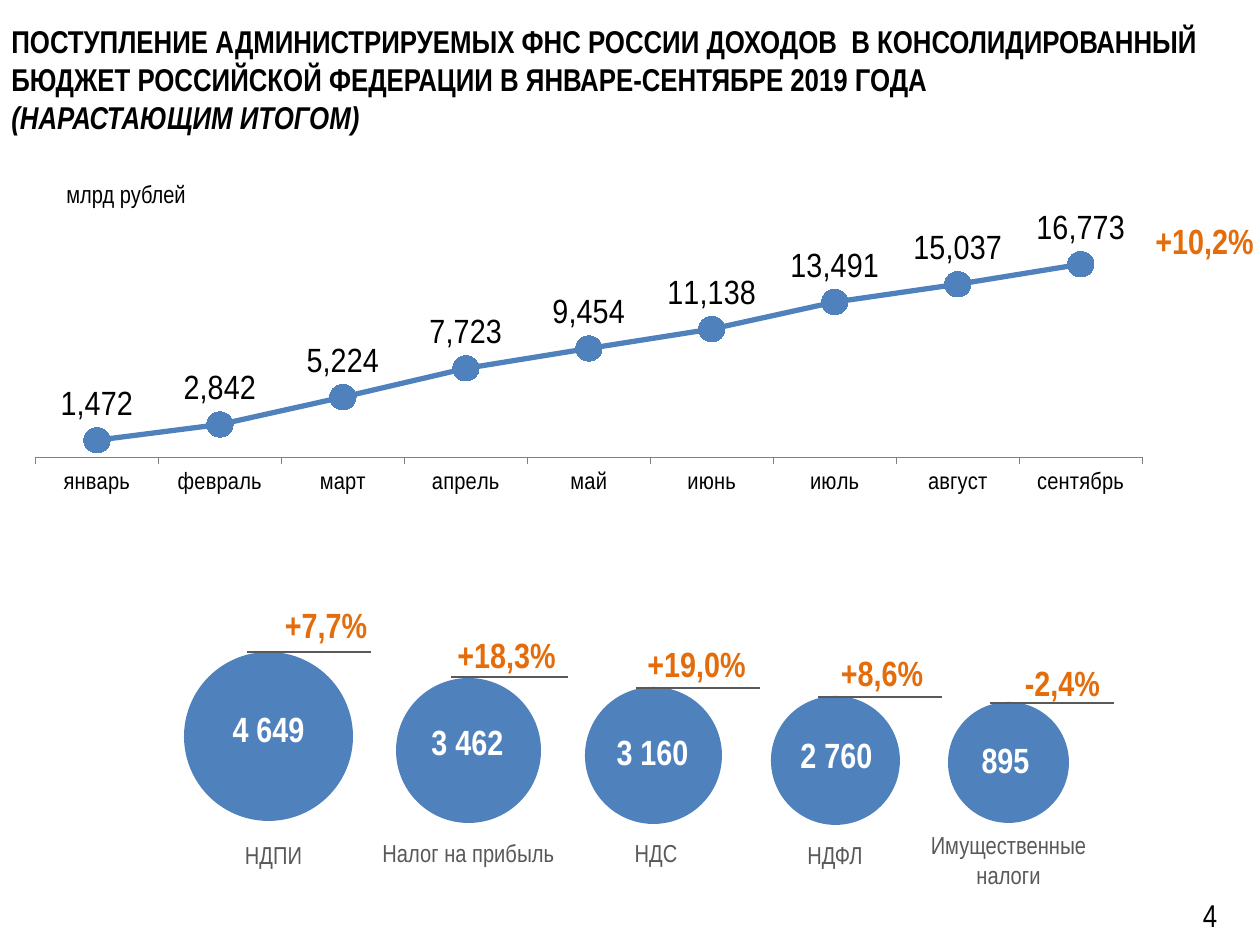
from dataclasses import dataclass

from lxml.etree import SubElement
from pptx import Presentation
from pptx.chart.data import CategoryChartData
from pptx.dml.color import RGBColor
from pptx.enum.chart import XL_CHART_TYPE as CHART, XL_LABEL_POSITION as LABEL_POS
from pptx.enum.chart import XL_MARKER_STYLE as MARKER, XL_TICK_LABEL_POSITION as TICK_POS
from pptx.enum.chart import XL_TICK_MARK as TICK
from pptx.enum.shapes import MSO_CONNECTOR as CONNECTOR, MSO_SHAPE as SHAPE
from pptx.enum.text import MSO_ANCHOR as ANCHOR, MSO_AUTO_SIZE as AUTO, PP_ALIGN as ALIGN
from pptx.oxml import parse_xml
from pptx.oxml.ns import nsdecls, qn
from pptx.util import Emu, Pt

SCALE = 914400 / 126
FONT = "Arial Narrow"
COLORS = {
    "black": "000000",
    "white": "FFFFFF",
    "blue": "4F81BD",
    "orange": "E46C0A",
    "gray": "595959",
    "axis": "808080",
}
MONTHS = ["январь", "февраль", "март", "апрель", "май", "июнь", "июль", "август", "сентябрь"]
REVENUE = [1472, 2842, 5224, 7723, 9454, 11138, 13491, 15037, 16773]


@dataclass(frozen=True)
class Box:
    x: int
    y: int
    w: int
    h: int


@dataclass(frozen=True)
class Style:
    size: int
    color: str
    bold: bool = False
    italic: bool = False


@dataclass(frozen=True)
class Tax:
    name: tuple[str, ...]
    value: str
    growth: str
    circle: Box
    value_box: Box
    growth_box: Box
    name_box: Box
    line: Box


LABEL = Style(14, "gray")
NOTE = Style(14, "black")
VALUE = Style(20, "white", bold=True)
GROWTH = Style(20, "orange", bold=True)

TAXES = [
    Tax(("НДПИ",), "4 649", "+7,7%", Box(184, 652, 169, 169), Box(207, 667, 123, 123),
        Box(272, 597, 108, 55), Box(232, 834, 83, 43), Box(247, 652, 124, 0)),
    Tax(("Налог на прибыль",), "3 462", "+18,3%", Box(396, 678, 145, 145), Box(406, 680, 123, 123),
        Box(444, 627, 125, 55), Box(369, 832, 199, 43), Box(451, 677, 117, 0)),
    Tax(("НДС",), "3 160", "+19,0%", Box(585, 687, 137, 137), Box(591, 690, 123, 123),
        Box(634, 636, 125, 55), Box(622, 832, 68, 43), Box(636, 688, 124, 0)),
    Tax(("НДФЛ",), "2 760", "+8,6%", Box(771, 696, 129, 129), Box(775, 693, 123, 123),
        Box(828, 645, 108, 55), Box(794, 834, 82, 43), Box(818, 697, 124, 0)),
    Tax(("Имущественные", "налоги"), "895", "-2,4%", Box(948, 702, 121, 121), Box(944, 698, 123, 123),
        Box(1012, 655, 101, 55), Box(917, 824, 183, 72), Box(990, 703, 124, 0)),
]


def px(n: int) -> Emu:
    return Emu(round(n * SCALE))


def rgb(name: str) -> RGBColor:
    return RGBColor.from_string(COLORS[name])


def place(box: Box) -> tuple[Emu, ...]:
    return px(box.x), px(box.y), px(box.w), px(box.h)


def add_run(p, text: str, style: Style) -> None:
    r = p.add_run()
    r.text = text
    r.font.name = FONT
    r.font.size = Pt(style.size)
    r.font.bold = style.bold
    r.font.italic = style.italic
    r.font.color.rgb = rgb(style.color)


def add_text(s, box: Box, lines: tuple[str, ...], style: Style, align=ALIGN.CENTER,
             anchor=ANCHOR.TOP, wrap: bool = False):
    tf = s.shapes.add_textbox(*place(box)).text_frame
    tf.word_wrap = wrap
    tf.vertical_anchor = anchor
    tf.auto_size = AUTO.SHAPE_TO_FIT_TEXT if anchor == ANCHOR.TOP else AUTO.NONE
    for i, line in enumerate(lines):
        p = tf.add_paragraph() if i else tf.paragraphs[0]
        p.alignment = align
        add_run(p, line, style)
    return tf


def add_circle(s, box: Box) -> None:
    sp = s.shapes.add_shape(SHAPE.OVAL, *place(box))
    sp.shadow.inherit = False
    sp.fill.solid()
    sp.fill.fore_color.rgb = rgb("blue")
    sp.line.fill.background()


def add_line(s, box: Box) -> None:
    line = s.shapes.add_connector(CONNECTOR.STRAIGHT, px(box.x), px(box.y),
                                  px(box.x + box.w), px(box.y + box.h))
    line.line.color.rgb = rgb("gray")
    line.line.width = Pt(1.5)
    SubElement(line._element.spPr, qn("a:effectLst"))


def add_tax(s, tax: Tax) -> None:
    add_circle(s, tax.circle)
    add_line(s, tax.line)
    add_text(s, tax.value_box, (tax.value,), VALUE, anchor=ANCHOR.MIDDLE)
    add_text(s, tax.growth_box, (tax.growth,), GROWTH)
    add_text(s, tax.name_box, tax.name, LABEL)


def add_revenue_chart(s, box: Box) -> None:
    data = CategoryChartData(number_format="#,##0")
    data.categories = MONTHS
    data.add_series("Поступления", REVENUE)
    chart = s.shapes.add_chart(CHART.LINE_MARKERS_STACKED, *place(box), data).chart
    chart.has_legend = False
    chart.has_title = False
    chart.font.name = FONT
    chart.font.size = Pt(18)
    chart.font.color.rgb = rgb("black")

    months = chart.category_axis
    months.major_tick_mark = TICK.OUTSIDE
    months.tick_label_position = TICK_POS.LOW
    months.tick_labels.font.size = Pt(14)
    months.format.line.color.rgb = rgb("axis")
    months.format.line.width = Pt(0.75)
    values = chart.value_axis
    values.visible = False
    values.has_major_gridlines = False
    values.minimum_scale = -200

    plot = chart.plots[0]
    plot.vary_by_categories = False
    series = plot.series[0]
    series.smooth = False
    series.format.line.color.rgb = rgb("blue")
    series.format.line.width = Pt(3)
    series.marker.style = MARKER.CIRCLE
    series.marker.size = 15
    series.marker.format.fill.solid()
    series.marker.format.fill.fore_color.rgb = rgb("blue")
    series.marker.format.line.color.rgb = rgb("blue")
    labels = series.data_labels
    labels.show_value = True
    labels.position = LABEL_POS.ABOVE
    labels.number_format = "#,##0"
    labels.number_format_is_linked = False
    labels.font.size = Pt(20)

    area = chart._chartSpace.chart.plotArea
    for old in area.findall(qn("c:layout")):
        area.remove(old)
    area.insert(0, parse_xml(
        f'<c:layout {nsdecls("c")}><c:manualLayout><c:layoutTarget val="inner"/>'
        '<c:xMode val="edge"/><c:yMode val="edge"/><c:x val="0.045"/><c:y val="0.1"/>'
        '<c:w val="0.914"/><c:h val="0.75"/></c:manualLayout></c:layout>'))


def main() -> None:
    prs = Presentation()
    prs.slide_width, prs.slide_height = px(1260), px(945)
    s = prs.slides.add_slide(prs.slide_layouts[6])

    title = "ПОСТУПЛЕНИЕ АДМИНИСТРИРУЕМЫХ ФНС РОССИИ ДОХОДОВ  В КОНСОЛИДИРОВАННЫЙ " \
            "БЮДЖЕТ РОССИЙСКОЙ ФЕДЕРАЦИИ В ЯНВАРЕ-СЕНТЯБРЕ 2019 ГОДА"
    tf = add_text(s, Box(-1, 0, 1261, 158), (title,), Style(18, "black", bold=True),
                  ALIGN.LEFT, ANCHOR.MIDDLE, wrap=True)
    p = tf.paragraphs[0]
    p.add_line_break()
    add_run(p, "(НАРАСТАЮЩИМ ИТОГОМ)", Style(18, "black", bold=True, italic=True))

    add_revenue_chart(s, Box(-19, 214, 1211, 287))
    add_text(s, Box(54, 173, 154, 43), ("млрд рублей",), NOTE, ALIGN.LEFT)
    add_text(s, Box(1143, 213, 125, 55), ("+10,2%",), GROWTH, ALIGN.LEFT)
    for tax in TAXES:
        add_tax(s, tax)
    number = add_text(s, Box(1160, 859, 100, 96), ("4",), Style(18, "black"),
                      anchor=ANCHOR.MIDDLE, wrap=True)
    number.paragraphs[0].line_spacing = Pt(30.1)
    prs.save("out.pptx")


if __name__ == "__main__":
    main()
